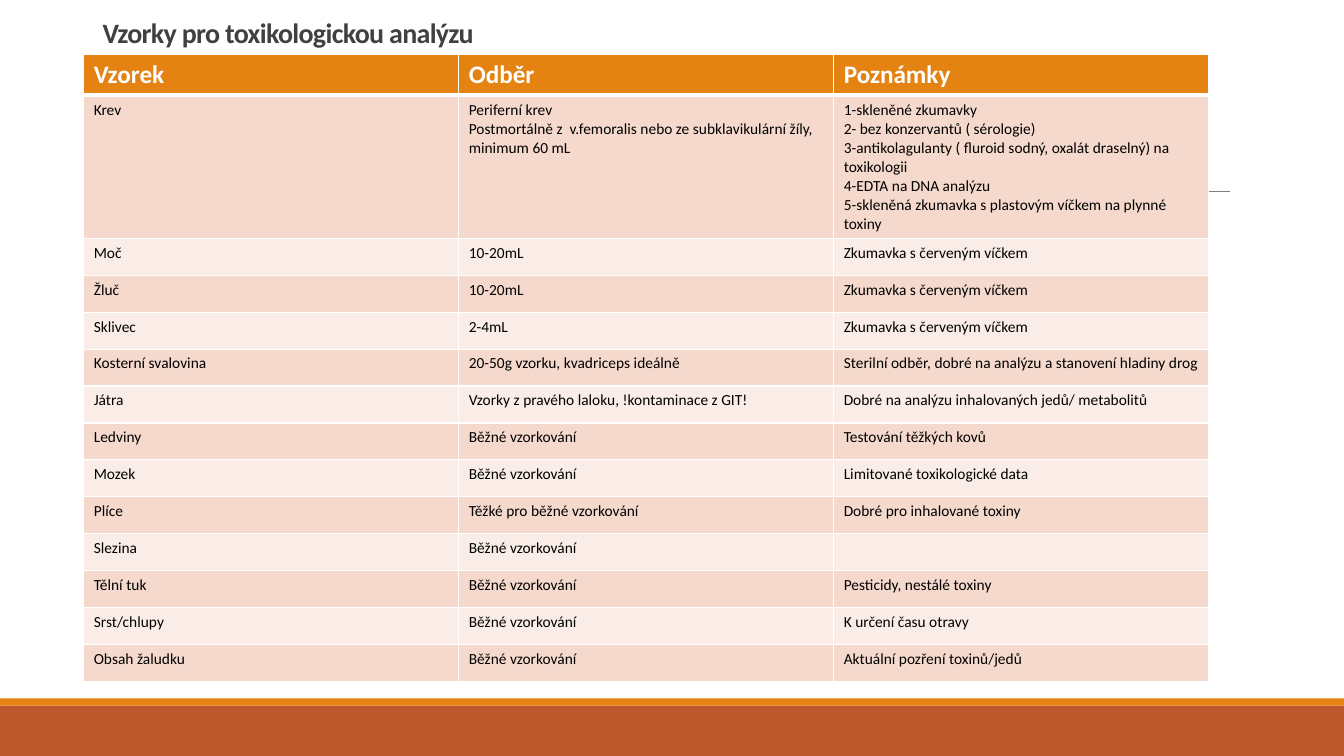
import pptx
import pptx.util
import pptx.dml.color
import pptx.enum.shapes
import pptx.enum.text
import pptx.oxml.ns
import lxml.etree

Cm = pptx.util.Cm
Pt = pptx.util.Pt
RGBColor = pptx.dml.color.RGBColor

ORANGE = RGBColor(0xE4, 0x83, 0x12)
RUST = RGBColor(0xBD, 0x58, 0x2C)
PINK = RGBColor(0xF5, 0xD9, 0xCC)
PALE_PINK = RGBColor(0xFA, 0xED, 0xE7)
GREY = RGBColor(0x80, 0x80, 0x80)
DARK_GREY = RGBColor(0x40, 0x40, 0x40)
WHITE = RGBColor(0xFF, 0xFF, 0xFF)
BLACK = RGBColor(0, 0, 0)

SLIDE_WIDTH, SLIDE_HEIGHT = Cm(33.87), Cm(19.05)
HEADER_HEIGHT, BLOOD_HEIGHT, ROW_HEIGHT = Cm(0.99), Cm(3.4), Cm(0.93)

TITLE = "Vzorky pro toxikologickou analýzu"
HEADINGS = ("Vzorek", "Odběr", "Poznámky")
RED_CAP = "Zkumavka s červeným víčkem"
ROUTINE = "Běžné vzorkování"
SAMPLES = [
    ("Krev",
     "Periferní krev\n"
     "Postmortálně z  v.femoralis nebo ze subklavikulární žíly, minimum 60 mL",
     "1-skleněné zkumavky\n"
     "2- bez konzervantů ( sérologie)\n"
     "3-antikolagulanty ( fluroid sodný, oxalát draselný) na toxikologii\n"
     "4-EDTA na DNA analýzu\n"
     "5-skleněná zkumavka s plastovým víčkem na plynné toxiny"),
    ("Moč", "10-20mL", RED_CAP),
    ("Žluč", "10-20mL", RED_CAP),
    ("Sklivec", "2-4mL", RED_CAP),
    ("Kosterní svalovina", "20-50g vzorku, kvadriceps ideálně",
     "Sterilní odběr, dobré na analýzu a stanovení hladiny drog"),
    ("Játra", "Vzorky z pravého laloku, !kontaminace z GIT!",
     "Dobré na analýzu inhalovaných jedů/ metabolitů"),
    ("Ledviny", ROUTINE, "Testování těžkých kovů"),
    ("Mozek", ROUTINE, "Limitované toxikologické data"),
    ("Plíce", "Těžké pro běžné vzorkování", "Dobré pro inhalované toxiny"),
    ("Slezina", ROUTINE, ""),
    ("Tělní tuk", ROUTINE, "Pesticidy, nestálé toxiny"),
    ("Srst/chlupy", ROUTINE, "K určení času otravy"),
    ("Obsah žaludku", ROUTINE, "Aktuální pozření toxinů/jedů"),
]


def write_text(frame, text, size, color, bold=False, line_spacing=None, tracking=None):
    """Fill a text frame, one paragraph per line; tracking is in points."""
    for index, line in enumerate(text.split("\n")):
        paragraph = frame.add_paragraph() if index else frame.paragraphs[0]
        paragraph.alignment = pptx.enum.text.PP_ALIGN.LEFT
        if line_spacing:
            paragraph.line_spacing = line_spacing
        if not line:
            # An empty cell must not grow to the default text size.
            paragraph._p.get_or_add_endParaRPr().set("sz", str(size * 100))
            continue
        run = paragraph.add_run()
        run.text = line
        run.font.name = "Calibri"
        run.font.size = Pt(size)
        run.font.bold = bold
        run.font.color.rgb = color
        if tracking:
            run.font._element.set("spc", str(int(tracking * 100)))


def add_bar(slide, left, top, width, height, color):
    bar = slide.shapes.add_shape(
        pptx.enum.shapes.MSO_SHAPE.RECTANGLE, left, top, width, height)
    bar.shadow.inherit = False
    bar.fill.solid()
    bar.fill.fore_color.rgb = color
    bar.line.fill.background()


def add_footer(slide, left, top, width, height):
    stripe = Cm(0.18)
    add_bar(slide, left, top + stripe, width, height - stripe, RUST)
    add_bar(slide, left, top, width, stripe, ORANGE)


def add_rule(slide, left, top, width):
    rule = slide.shapes.add_connector(
        pptx.enum.shapes.MSO_CONNECTOR.STRAIGHT, left, top, left + width, top)
    rule.line.color.rgb = GREY
    rule.line.width = Pt(0.5)
    lxml.etree.SubElement(rule._element.spPr, pptx.oxml.ns.qn("a:effectLst"))


def add_title(slide, left, top, width, height):
    title = slide.shapes.title
    title.left, title.top, title.width, title.height = left, top, width, height
    frame = title.text_frame
    frame.word_wrap = True
    frame.auto_size = pptx.enum.text.MSO_AUTO_SIZE.NONE
    frame.vertical_anchor = pptx.enum.text.MSO_ANCHOR.BOTTOM
    write_text(frame, TITLE, 20, DARK_GREY, bold=True, line_spacing=0.85, tracking=-0.5)


def set_borders(cell, **widths):
    """Draw white borders; widths in points are keyed by side: L, R, T, B."""
    properties = cell._tc.get_or_add_tcPr()
    for index, (side, width) in enumerate(widths.items()):
        border = lxml.etree.Element(pptx.oxml.ns.qn(f"a:ln{side}"), w=str(Pt(width)))
        fill = lxml.etree.SubElement(border, pptx.oxml.ns.qn("a:solidFill"))
        lxml.etree.SubElement(fill, pptx.oxml.ns.qn("a:srgbClr"), val=str(WHITE))
        properties.insert(index, border)


def add_sample_table(slide, left, top, width):
    rows = [HEADINGS] + SAMPLES
    heights = [HEADER_HEIGHT, BLOOD_HEIGHT] + [ROW_HEIGHT] * (len(SAMPLES) - 1)
    table = slide.shapes.add_table(
        len(rows), len(HEADINGS), left, top, width, sum(heights)).table
    for column in table.columns:
        column.width = width // len(HEADINGS)
    for row_index, (texts, height) in enumerate(zip(rows, heights)):
        table.rows[row_index].height = height
        is_header = row_index == 0
        fill = ORANGE if is_header else PINK if row_index % 2 else PALE_PINK
        for column_index, text in enumerate(texts):
            cell = table.cell(row_index, column_index)
            cell.fill.solid()
            cell.fill.fore_color.rgb = fill
            set_borders(cell, L=1, R=1, T=3 if row_index == 1 else 1,
                        B=3 if is_header else 1)
            write_text(cell.text_frame, text, size=18 if is_header else 11,
                       color=WHITE if is_header else BLACK, bold=is_header)


def main():
    presentation = pptx.Presentation()
    presentation.slide_width = SLIDE_WIDTH
    presentation.slide_height = SLIDE_HEIGHT
    slide = presentation.slides.add_slide(presentation.slide_layouts[5])
    footer_top = Cm(17.6)
    add_footer(slide, 0, footer_top, SLIDE_WIDTH, SLIDE_HEIGHT - footer_top)
    add_rule(slide, Cm(3.32), Cm(4.82), Cm(27.68))
    add_title(slide, Cm(2.33), Cm(0.55), Cm(29.21), Cm(0.81))
    add_sample_table(slide, Cm(2.11), Cm(1.37), Cm(28.35))
    presentation.save("out.pptx")


if __name__ == "__main__":
    main()
